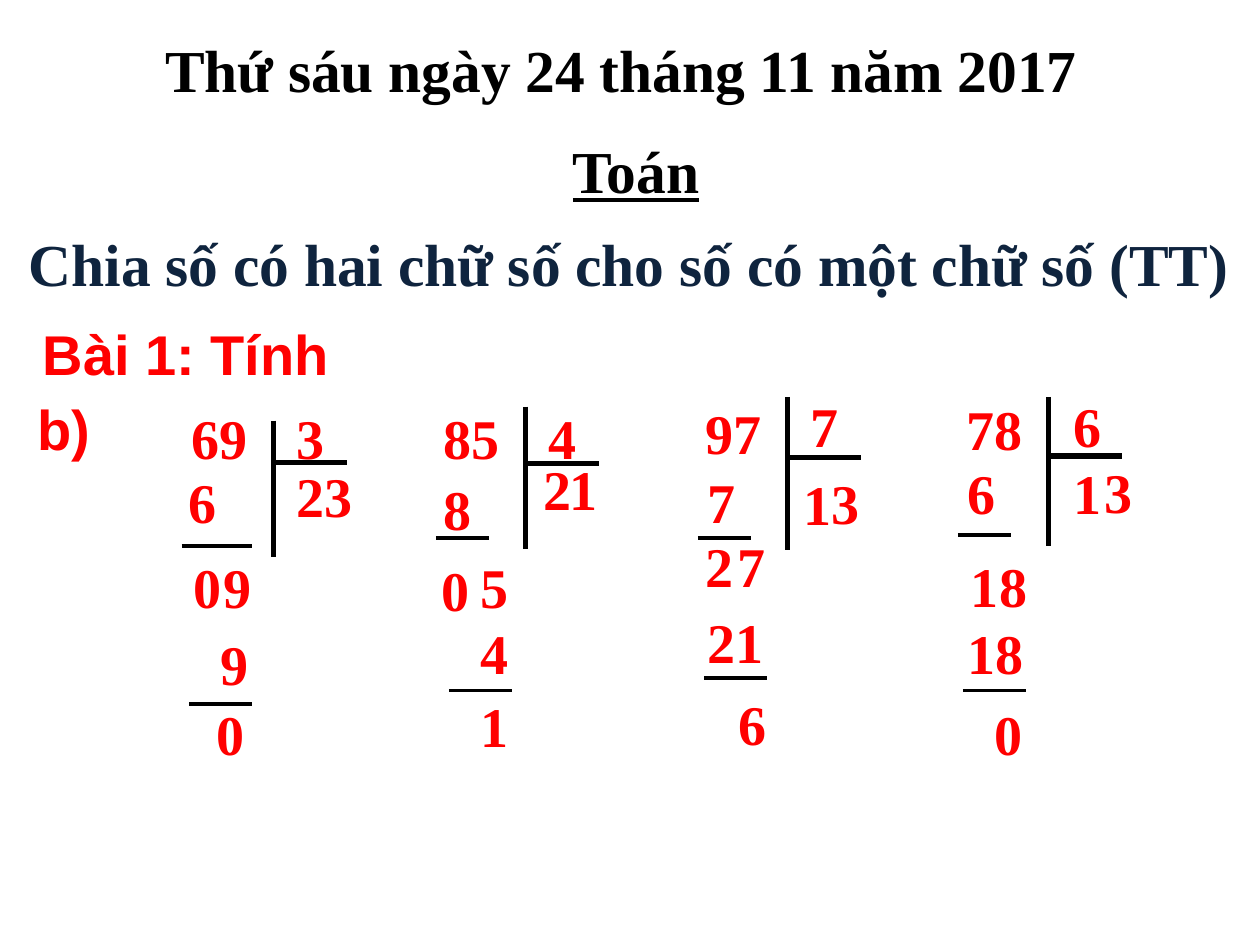
from dataclasses import dataclass

from lxml import etree
from pptx import Presentation
from pptx.dml.color import RGBColor
from pptx.enum.shapes import MSO_CONNECTOR
from pptx.enum.text import MSO_ANCHOR, MSO_AUTO_SIZE, PP_ALIGN
from pptx.oxml.ns import qn
from pptx.util import Cm, Pt

STRAIGHT = MSO_CONNECTOR.STRAIGHT
TOP = MSO_ANCHOR.TOP
GROW = MSO_AUTO_SIZE.SHAPE_TO_FIT_TEXT
LEFT, CENTER = PP_ALIGN.LEFT, PP_ALIGN.CENTER
TITLE_ONLY = 5


@dataclass(frozen=True)
class Theme:
    black: RGBColor = RGBColor(0x00, 0x00, 0x00)
    navy: RGBColor = RGBColor(0x0F, 0x24, 0x3E)
    red: RGBColor = RGBColor(0xFF, 0x00, 0x00)
    serif: str = "Times New Roman"
    sans: str = "Arial"
    heading: Pt = Pt(34)
    body: Pt = Pt(32)
    bracket: Pt = Pt(3)
    rule: Pt = Pt(2.25)


THEME = Theme()
HEADING = dict(name=THEME.serif, size=THEME.heading, bold=True)
DIGIT = dict(name=THEME.serif, size=THEME.body, bold=True)
LABEL = dict(name=THEME.sans, size=THEME.body, bold=True)

DIGIT_W, LINE_H = 1.07, 1.63
BRACKET_X, BRACKET_W = 1.91, 1.47

# Centimetres from the dividend's corner.
# digits: text, x, y, width; bracket: top, middle, bottom; rules: x, y, length
DIVISIONS = [
    dict(origin=(3.61, 8.0), bracket=(0.48, 1.32, 3.23),
         digits=[("69", 0, 0, 1.7), ("3", 2.11, 0, 1.47),
                 ("2", 2.11, 1.17, DIGIT_W), ("3", 2.69, 1.17, DIGIT_W),
                 ("6", -0.05, 1.3, DIGIT_W),
                 ("0", 0.05, 3.02, 0.84), ("9", 0.64, 3.02, DIGIT_W),
                 ("9", 0.58, 4.57, DIGIT_W), ("0", 0.51, 5.97, 0.97)],
         rules=[(0.05, 3.0, 1.42), (0.2, 6.2, 1.27)]),
    dict(origin=(8.69, 8.0), bracket=(0.2, 1.35, 3.07),
         digits=[("85", 0, 0, 1.7), ("4", 2.11, 0, 1.47),
                 ("2", 2.01, 1.04, DIGIT_W), ("1", 2.54, 1.04, DIGIT_W),
                 ("8", 0, 1.45, DIGIT_W),
                 ("0", -0.03, 3.07, DIGIT_W), ("5", 0.74, 3.02, DIGIT_W),
                 ("4", 0.74, 4.34, 1.47), ("1", 0.74, 5.82, 1.19)],
         rules=[(0.1, 2.84, 1.07), (0.36, 5.92, 1.27)]),
    dict(origin=(13.97, 7.9), bracket=(0.1, 1.32, 3.18),
         digits=[("97", 0, 0, 1.75), ("7", 2.11, -0.13, 1.47),
                 ("1", 1.98, 1.45, DIGIT_W), ("3", 2.54, 1.42, DIGIT_W),
                 ("7", 0.05, 1.4, DIGIT_W),
                 ("2", 0, 2.69, 1.27), ("7", 0.64, 2.69, DIGIT_W),
                 ("21", 0.05, 4.22, 2.11), ("6", 0.66, 5.87, DIGIT_W)],
         rules=[(0.1, 2.95, 1.07), (0.23, 5.77, 1.27)]),
    dict(origin=(19.23, 7.82), bracket=(0.18, 1.37, 3.18),
         digits=[("78", 0, 0, 1.7), ("6", 2.16, -0.05, 1.47),
                 ("1", 2.16, 1.3, DIGIT_W), ("3", 2.79, 1.27, DIGIT_W),
                 ("6", 0.03, 1.3, DIGIT_W),
                 ("1", 0.08, 3.18, 0.86), ("8", 0.66, 3.18, DIGIT_W),
                 ("18", 0.03, 4.52, 2.39), ("0", 0.56, 6.15, DIGIT_W)],
         rules=[(0.08, 2.97, 1.07), (0.18, 6.1, 1.27)]),
]


def write_paragraph(p, text, color, align=LEFT, **font):
    """Write one run, with half a line of space before the paragraph."""
    p.alignment = align
    spacing = etree.SubElement(p._p.get_or_add_pPr(), qn("a:spcBef"))
    etree.SubElement(spacing, qn("a:spcPct")).set("val", "50000")
    r = p.add_run()
    r.text = text
    for key, value in font.items():
        setattr(r.font, key, value)
    r.font.color.rgb = color


def set_frame(tf):
    for key, value in dict(word_wrap=True, auto_size=GROW,
                           vertical_anchor=TOP).items():
        setattr(tf, key, value)


def add_text(s, text, x, y, w, h, color, **font):
    tf = s.shapes.add_textbox(Cm(x), Cm(y), Cm(w), Cm(h)).text_frame
    set_frame(tf)
    write_paragraph(tf.paragraphs[0], text, color, **font)


def add_line(shapes, x1, y1, x2, y2, width):
    line = shapes.add_connector(STRAIGHT, Cm(x1), Cm(y1), Cm(x2), Cm(y2))
    line.line.color.rgb = THEME.black
    line.line.width = width
    etree.SubElement(line._element.spPr, qn("a:effectLst"))


def place_title(s, x, y, w, h):
    sp = s.shapes.title
    sp.left, sp.top, sp.width, sp.height = Cm(x), Cm(y), Cm(w), Cm(h)
    tf = sp.text_frame
    set_frame(tf)
    write_paragraph(tf.paragraphs[0], "Thứ sáu ngày 24 tháng 11 năm 2017",
                    THEME.black, CENTER, **HEADING)
    subject = tf.add_paragraph()
    write_paragraph(subject, "Toán", THEME.black, CENTER, underline=True, **HEADING)
    subject._p.get_or_add_pPr().set("marL", str(Cm(0.6)))


def add_long_division(s, origin, digits, bracket, rules):
    x, y = origin
    for text, dx, dy, w in digits:
        add_text(s, text, x + dx, y + dy, w, LINE_H, THEME.red, **DIGIT)
    top, middle, bottom = bracket
    left = x + BRACKET_X
    shapes = s.shapes.add_group_shape().shapes
    add_line(shapes, left, y + top, left, y + bottom, THEME.bracket)
    add_line(shapes, left, y + middle, left + BRACKET_W, y + middle, THEME.bracket)
    for dx, dy, length in rules:
        add_line(s.shapes, x + dx, y + dy, x + dx + length, y + dy, THEME.rule)


def main():
    prs = Presentation()
    prs.slide_width, prs.slide_height = Cm(25.4), Cm(19.05)
    s = prs.slides.add_slide(prs.slide_layouts[TITLE_ONLY])
    place_title(s, 0.76, 0.53, 23.53, 3.89)
    add_text(s, "Chia số có hai chữ số cho số có một chữ số (TT)",
             0.33, 4.45, 25.4, 1.7, THEME.navy, **HEADING)
    add_text(s, "Bài 1: Tính", 0.61, 6.32, 8.46, LINE_H, THEME.red, **LABEL)
    add_text(s, "b)", 0.51, 7.82, 1.91, LINE_H, THEME.red, **LABEL)
    for division in DIVISIONS:
        add_long_division(s, **division)
    prs.save("out.pptx")


if __name__ == "__main__":
    main()
